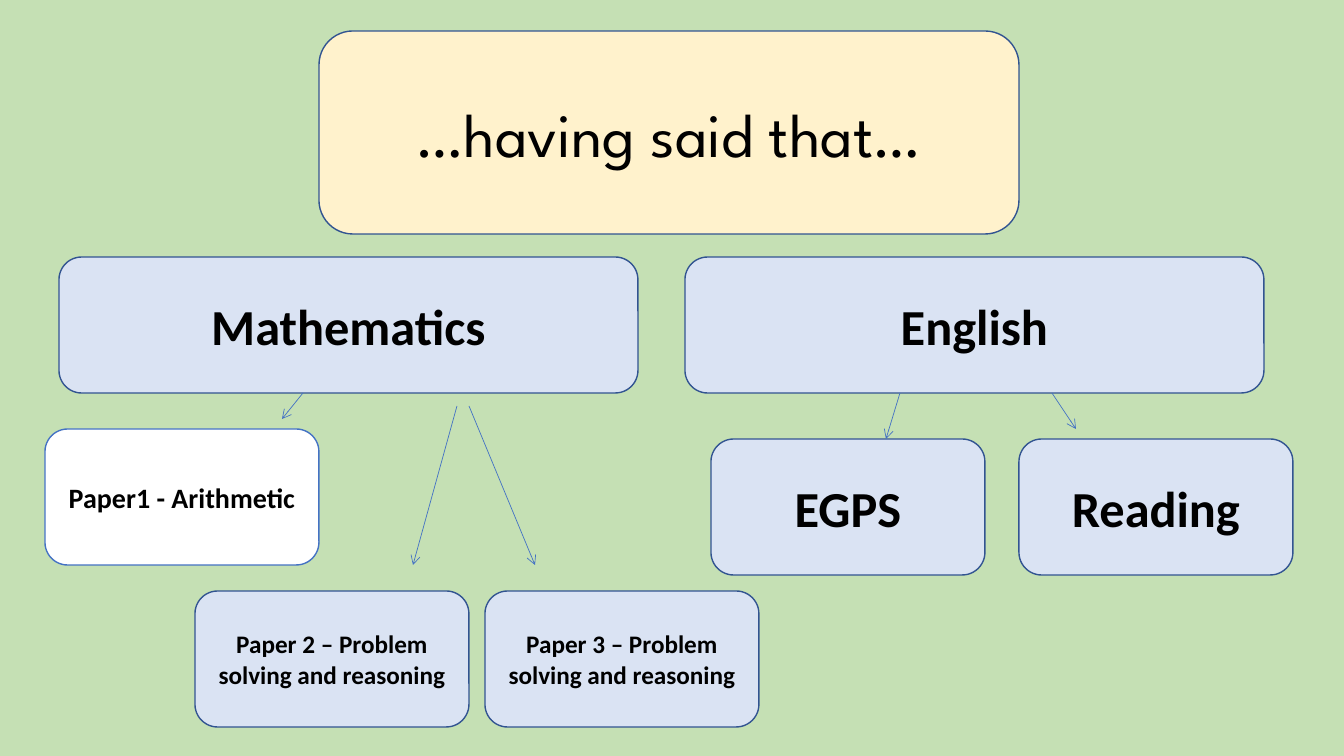
from dataclasses import dataclass

from lxml import etree
from pptx import Presentation
from pptx.dml.color import RGBColor
from pptx.enum.shapes import MSO_CONNECTOR, MSO_SHAPE
from pptx.enum.text import MSO_ANCHOR, PP_ALIGN
from pptx.oxml.ns import qn
from pptx.util import Emu, Pt

ROUNDED = MSO_SHAPE.ROUNDED_RECTANGLE
STRAIGHT = MSO_CONNECTOR.STRAIGHT
MIDDLE = MSO_ANCHOR.MIDDLE
CENTER = PP_ALIGN.CENTER
SLIDE_W, SLIDE_H = 1344, 756
EMU_PER_PX = 12192000 / SLIDE_W


@dataclass(frozen=True)
class Theme:
    background: RGBColor = RGBColor.from_string("C5E0B4")
    cream: RGBColor = RGBColor.from_string("FFF2CC")
    pale_blue: RGBColor = RGBColor.from_string("DAE3F3")
    white: RGBColor = RGBColor.from_string("FFFFFF")
    outline: RGBColor = RGBColor.from_string("325491")
    accent: RGBColor = RGBColor.from_string("4472C4")
    ink: RGBColor = RGBColor.from_string("000000")
    heading_font: str = "League Spartan"
    body_font: str = "Calibri"
    heading_size: int = 44
    subject_size: int = 36
    arithmetic_size: int = 20
    reasoning_size: int = 18


theme = Theme()


def px(*lengths):
    return [Emu(round(length * EMU_PER_PX)) for length in lengths]


def add_box(left, top, width, height, label, size,
            fill=theme.pale_blue, outline=theme.outline,
            font_name=theme.body_font, bold=True):
    box = slide.shapes.add_shape(ROUNDED, *px(left, top, width, height))
    box.shadow.inherit = False
    box.fill.solid()
    box.fill.fore_color.rgb = fill
    box.line.color.rgb = outline
    box.line.width = Pt(1)
    frame = box.text_frame
    frame.word_wrap = True
    frame.vertical_anchor = MIDDLE
    paragraph = frame.paragraphs[0]
    paragraph.text = label
    paragraph.alignment = CENTER
    paragraph.font.name = font_name
    paragraph.font.size = Pt(size)
    paragraph.font.bold = bold
    paragraph.font.color.rgb = theme.ink


deck = Presentation()
deck.slide_width, deck.slide_height = px(SLIDE_W, SLIDE_H)
slide = deck.slides.add_slide(deck.slide_layouts[6])
slide.background.fill.solid()
slide.background.fill.fore_color.rgb = theme.background

add_box(319, 31, 700, 203, "…having said that…", theme.heading_size,
        fill=theme.cream, font_name=theme.heading_font, bold=False)

SUBJECT_W, PAPER_W, ROW_H = 579, 274, 136

for left, subject in ((59, "Mathematics"), (685, "English")):
    add_box(left, 257, SUBJECT_W, ROW_H, subject, theme.subject_size)

for left, number in ((485, 3), (195, 2)):
    add_box(left, 591, PAPER_W, ROW_H,
            f"Paper {number} – Problem solving and reasoning",
            theme.reasoning_size)

add_box(45, 429, PAPER_W, ROW_H, "Paper1 - Arithmetic",
        theme.arithmetic_size, fill=theme.white, outline=theme.accent)

for left, paper in ((711, "EGPS"), (1019, "Reading")):
    add_box(left, 439, PAPER_W, ROW_H, paper, theme.subject_size)

subject_to_paper = (
    (303, 393, 282, 419),
    (457, 406, 413, 565),
    (469, 406, 535, 565),
    (900, 393, 886, 439),
    (1052, 393, 1076, 429),
)
for ends in subject_to_paper:
    arrow = slide.shapes.add_connector(STRAIGHT, *px(*ends))
    arrow.line.color.rgb = theme.accent
    arrow.line.width = Pt(0.5)
    etree.SubElement(arrow.line._get_or_add_ln(), qn("a:tailEnd"), type="arrow")
    etree.SubElement(arrow._element.spPr, qn("a:effectLst"))

deck.save("out.pptx")
